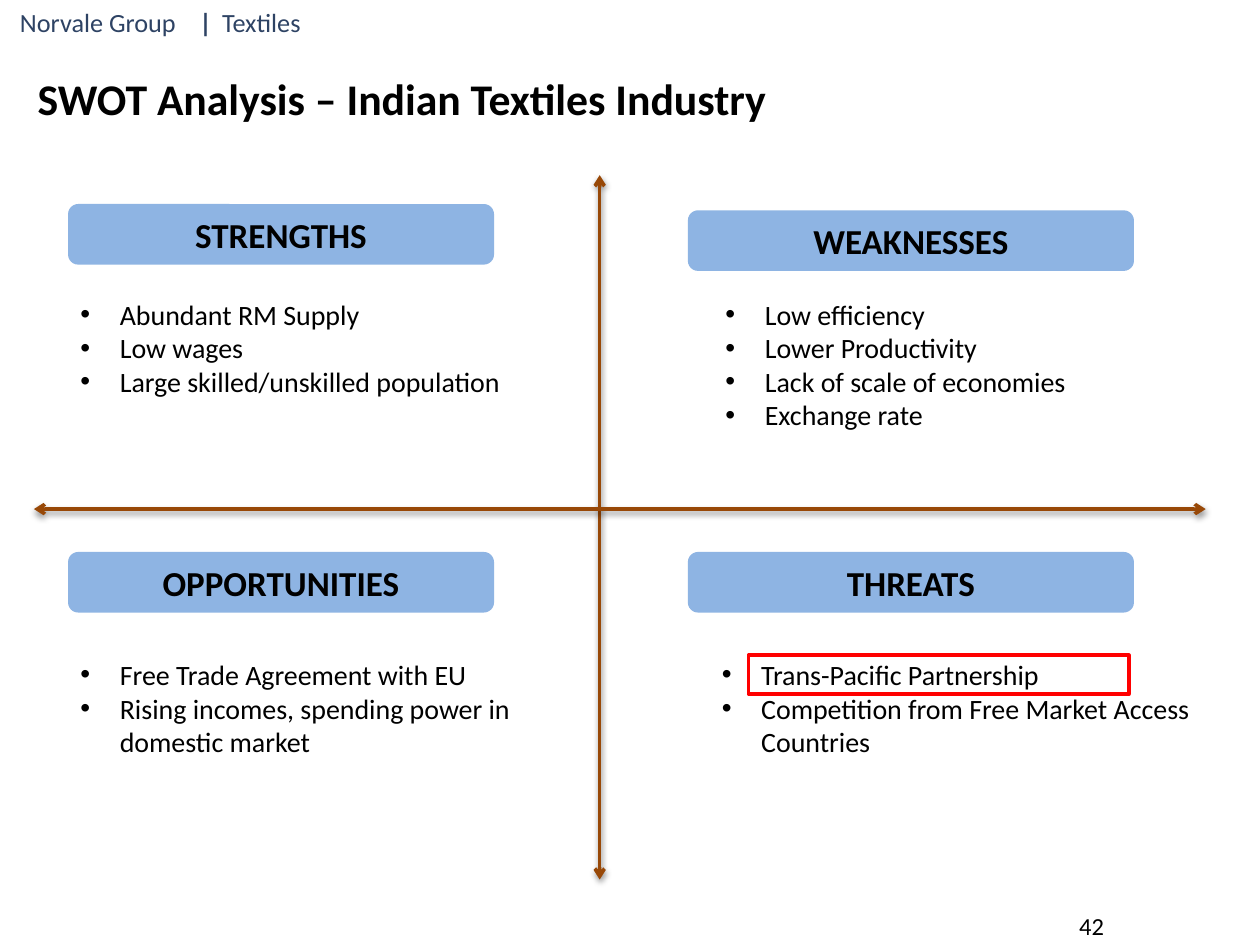
from dataclasses import dataclass

from lxml import etree
from pptx import Presentation
from pptx import util as u
from pptx.dml import color
from pptx.enum import shapes, text
from pptx.oxml import ns

Pt = u.Pt


@dataclass(frozen=True)
class Theme:
    font: str = "Calibri"
    ink: str = "000000"
    header: str = "2E4364"
    panel: str = "8EB4E3"
    axis: str = "984807"
    alert: str = "FF0000"
    header_size: float = 15
    title_size: float = 25
    heading_size: float = 20
    body_size: float = 16
    number_size: float = 14


theme = Theme()
AUTO = text.MSO_AUTO_SIZE
ALIGN = text.PP_ALIGN
ANCHOR = text.MSO_ANCHOR


def rgb(value):
    return color.RGBColor.from_string(value)


def write(box, lines, size, ink=theme.ink, bold=False, align=ALIGN.LEFT,
          bullet=False, tabs=(), **frame_format):
    """Fill a box with paragraphs; each line is a list of (words, bold) runs or a string."""
    frame = box.text_frame
    frame_settings = {"word_wrap": True, "auto_size": AUTO.NONE,
                      "vertical_anchor": ANCHOR.TOP, **frame_format}
    for name, value in frame_settings.items():
        setattr(frame, name, value)
    for index, line in enumerate(lines):
        para = frame.paragraphs[0] if index == 0 else frame.add_paragraph()
        para.alignment = align
        props = para._p.get_or_add_pPr()
        if bullet:
            props.set("marL", str(Pt(22.5)))
            props.set("indent", str(-Pt(22.5)))
            etree.SubElement(props, ns.qn("a:buFont"), typeface="Arial")
            etree.SubElement(props, ns.qn("a:buChar"), char="•")
        if tabs:
            stops = etree.SubElement(props, ns.qn("a:tabLst"))
            for stop in tabs:
                etree.SubElement(stops, ns.qn("a:tab"), pos=str(Pt(stop)), algn="l")
        for words, heavy in [(line, bold)] if isinstance(line, str) else line:
            span = para.add_run()
            span.text = words
            for name, value in {"name": theme.font, "size": Pt(size), "bold": heavy}.items():
                setattr(span.font, name, value)
            span.font.color.rgb = rgb(ink)


deck = Presentation()
deck.slide_width, deck.slide_height = Pt(720), Pt(540)
page = deck.slides.add_slide(deck.slide_layouts[6])

# Header, page number and title
header = page.shapes.add_textbox(Pt(4.3), Pt(0), Pt(176.4), Pt(25.2))
write(header, [[("Norvale Group\t", False), ("|\t", True), ("Textiles", False)]],
      theme.header_size, ink=theme.header, tabs=(102.5, 115.5))

number = page.shapes.add_textbox(Pt(470.2), Pt(514.8), Pt(167.8), Pt(28.8))
write(number, ["42"], theme.number_size, align=ALIGN.RIGHT, vertical_anchor=ANCHOR.MIDDLE)

title = page.shapes.add_textbox(Pt(14.4), Pt(37.4), Pt(606.2), Pt(48.2))
write(title, ["SWOT Analysis – Indian Textiles Industry"], theme.title_size, bold=True)

# Quadrants: heading, heading left/top/width, list left/top/width/height, items
LEFT, RIGHT = (38.9, 243.4), (393.1, 254.9)
UPPER_LIST, LOWER_LIST, LOWER_HEADING = 166.3, 372.2, 315.4
quadrants = [
    ("STRENGTHS", LEFT, 116.6, (38.9, UPPER_LIST, 255.6, 65.5),
     ["Abundant RM Supply", "Low wages", "Large skilled/unskilled population"]),
    ("WEAKNESSES", RIGHT, 120.2, (407.5, UPPER_LIST, 254.9, 85),
     ["Low efficiency", "Lower Productivity", "Lack of scale of economies", "Exchange rate"]),
    ("OPPORTUNITIES", LEFT, LOWER_HEADING, (38.9, LOWER_LIST, 265, 65.5),
     ["Free Trade Agreement with EU", "Rising incomes, spending power in domestic market"]),
    ("THREATS", RIGHT, LOWER_HEADING, (405.4, LOWER_LIST, 295.2, 65.5),
     ["Trans-Pacific Partnership", "Competition from Free Market Access Countries"]),
]
for heading, (left, width), top, list_area, items in quadrants:
    panel = page.shapes.add_shape(shapes.MSO_SHAPE.ROUNDED_RECTANGLE,
                                  Pt(left), Pt(top), Pt(width), Pt(34.6))
    panel.shadow.inherit = False
    panel.fill.solid()
    panel.fill.fore_color.rgb = rgb(theme.panel)
    panel.line.fill.background()
    write(panel, [heading], theme.heading_size, bold=True, align=ALIGN.CENTER,
          auto_size=AUTO.SHAPE_TO_FIT_TEXT)
    points = page.shapes.add_textbox(*map(Pt, list_area))
    write(points, items, theme.body_size, bullet=True, auto_size=AUTO.SHAPE_TO_FIT_TEXT)

# Axes with arrowheads at both ends and a soft shadow
for ends in [(342.7, 100.1, 342.7, 502.6), (19.4, 290.9, 689, 290.9)]:
    axis = page.shapes.add_connector(shapes.MSO_CONNECTOR.STRAIGHT, *map(Pt, ends))
    axis.line.width = Pt(2)
    axis.line.color.rgb = rgb(theme.axis)
    outline = axis.line._get_or_add_ln()
    for end in ("a:headEnd", "a:tailEnd"):
        etree.SubElement(outline, ns.qn(end), type="arrow")
    effects = etree.SubElement(axis._element.spPr, ns.qn("a:effectLst"))
    shadow = etree.SubElement(effects, ns.qn("a:outerShdw"), blurRad=str(Pt(3.1)),
                              dist=str(Pt(1.6)), dir="5400000", rotWithShape="0")
    tint = etree.SubElement(shadow, ns.qn("a:srgbClr"), val=theme.ink)
    etree.SubElement(tint, ns.qn("a:alpha"), val="38000")

# Frame around the first threat
frame = page.shapes.add_shape(shapes.MSO_SHAPE.RECTANGLE,
                              Pt(427.7), Pt(374.4), Pt(217.4), Pt(22.3))
frame.shadow.inherit = False
frame.fill.background()
frame.line.color.rgb = rgb(theme.alert)
frame.line.width = Pt(2)

deck.save("out.pptx")
